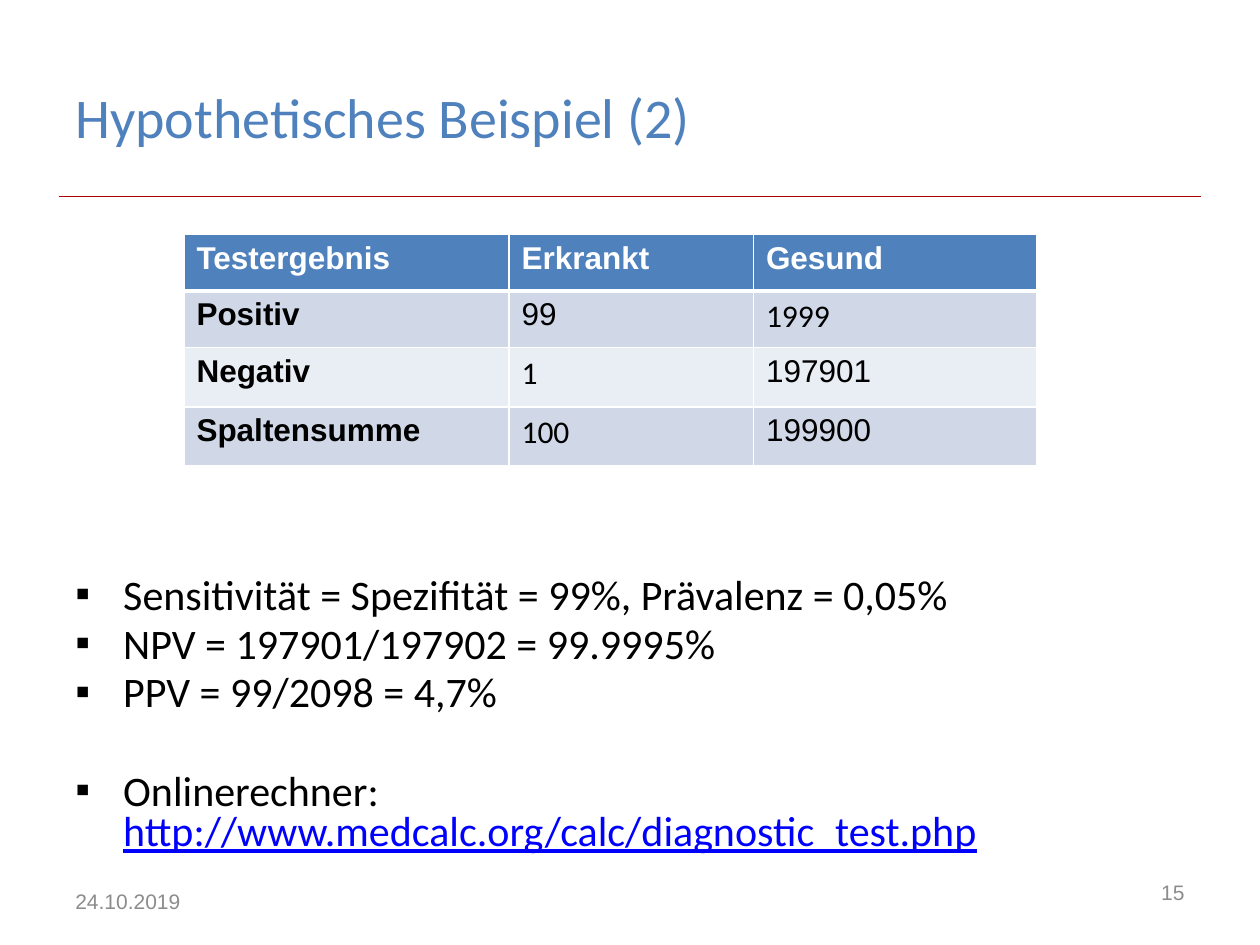
import pptx
import pptx.dml.color
import pptx.enum.shapes
import pptx.enum.text
import pptx.oxml.ns
import pptx.util
from lxml import etree

Inches = pptx.util.Inches
Pt = pptx.util.Pt
RGBColor = pptx.dml.color.RGBColor
Anchor = pptx.enum.text.MSO_ANCHOR
Align = pptx.enum.text.PP_ALIGN
qn = pptx.oxml.ns.qn

BLUE = RGBColor(0x4F, 0x81, 0xBD)
BAND_DARK = RGBColor(0xD0, 0xD8, 0xE8)
BAND_LIGHT = RGBColor(0xE9, 0xED, 0xF4)
WHITE = RGBColor(0xFF, 0xFF, 0xFF)
BLACK = RGBColor(0, 0, 0)
GREY = RGBColor(0x8C, 0x8C, 0x8C)
RED = RGBColor(0xAC, 0, 0)
LINK_BLUE = RGBColor(0, 0, 0xFF)

TABLE_ROWS = [
    ("Testergebnis", "Erkrankt", "Gesund"),
    ("Positiv", "99", "1999"),
    ("Negativ", "1", "197901"),
    ("Spaltensumme", "100", "199900"),
]
CALIBRI_VALUES = {"1999", "1", "100"}
COLUMN_WIDTHS = (2.58, 1.94, 2.25)
ROW_HEIGHTS = (0.45, 0.45, 0.47, 0.47)

# Each bullet: its runs as (text, is link), and the space before in points
BULLETS = [
    ([("Sensitivität = Spezifität = 99%, Prävalenz = 0,05%", False)], 0),
    ([("NPV = 197901/197902 = 99.9995%", False)], 4.8),
    ([("PPV = 99/2098 = 4,7%", False)], 4.8),
    ([("Onlinerechner: ", False),
      ("http://www.medcalc.org/calc/diagnostic_test.php", True)], 33),
]


def add_run(paragraph, text, color, **font_format):
    run = paragraph.add_run()
    run.text = text
    run.font.color.rgb = color
    for name, value in font_format.items():
        setattr(run.font, name, value)


def add_text_frame(slide, left, top, width, height, anchor=Anchor.MIDDLE):
    box = slide.shapes.add_textbox(
        Inches(left), Inches(top), Inches(width), Inches(height))
    frame = box.text_frame
    frame.word_wrap = True
    frame.vertical_anchor = anchor
    return frame


def add_label(slide, place, text, color, align=Align.LEFT, **font_format):
    paragraph = add_text_frame(slide, *place).paragraphs[0]
    paragraph.alignment = align
    add_run(paragraph, text, color, **font_format)


def add_rule(slide, left, right, y):
    rule = slide.shapes.add_connector(
        pptx.enum.shapes.MSO_CONNECTOR.STRAIGHT,
        Inches(left), Inches(y), Inches(right), Inches(y))
    rule.line.color.rgb = RED
    rule.line.width = Pt(0.25)
    etree.SubElement(rule._element.spPr, qn("a:effectLst"))


def set_bullet(paragraph):
    properties = paragraph._p.get_or_add_pPr()
    properties.set("marL", str(Inches(0.38)))
    properties.set("indent", str(-Inches(0.38)))
    etree.SubElement(properties, qn("a:buFont"), typeface="Arial")
    etree.SubElement(properties, qn("a:buChar"), char="▪")


def add_bullets(slide):
    frame = add_text_frame(slide, 0.5, 4.54, 9, 2.42, Anchor.TOP)
    for index, (runs, space_before) in enumerate(BULLETS):
        paragraph = frame.add_paragraph() if index else frame.paragraphs[0]
        set_bullet(paragraph)
        paragraph.line_spacing = 0.8
        paragraph.space_before = Pt(space_before)
        for text, is_link in runs:
            add_run(paragraph, text, LINK_BLUE if is_link else BLACK,
                    name="Calibri", size=Pt(24), underline=is_link)


def set_cell_borders(cell, widths):
    properties = cell._tc.get_or_add_tcPr()
    for side, width in widths.items():
        line = etree.SubElement(properties, qn("a:ln" + side), w=str(Pt(width)))
        fill = etree.SubElement(line, qn("a:solidFill"))
        etree.SubElement(fill, qn("a:srgbClr"), val=str(WHITE))


def add_result_table(slide):
    table = slide.shapes.add_table(
        len(TABLE_ROWS), len(COLUMN_WIDTHS), Inches(1.46), Inches(1.86),
        Inches(sum(COLUMN_WIDTHS)), Inches(sum(ROW_HEIGHTS))).table
    for column, width in zip(table.columns, COLUMN_WIDTHS):
        column.width = Inches(width)
    for row, height in zip(table.rows, ROW_HEIGHTS):
        row.height = Inches(height)

    for row_index, texts in enumerate(TABLE_ROWS):
        is_header = row_index == 0
        band = BAND_DARK if row_index % 2 else BAND_LIGHT
        for column_index, text in enumerate(texts):
            cell = table.cell(row_index, column_index)
            set_cell_borders(cell, {"L": 1, "R": 1,
                                    "T": 3 if row_index == 1 else 1,
                                    "B": 3 if is_header else 1})
            cell.fill.solid()
            cell.fill.fore_color.rgb = BLUE if is_header else band
            add_run(cell.text_frame.paragraphs[0], text,
                    WHITE if is_header else BLACK,
                    name="Calibri" if text in CALIBRI_VALUES else "Arial",
                    size=Pt(18), bold=is_header or column_index == 0)


def main():
    presentation = pptx.Presentation()
    presentation.slide_width = Inches(10)
    presentation.slide_height = Inches(7.5)
    slide = presentation.slides.add_slide(presentation.slide_layouts[6])

    # Title and rule
    add_rule(slide, 0.47, 9.53, 1.56)
    add_label(slide, (0.5, 0.3, 6.77, 1.25), "Hypothetisches Beispiel (2)",
              BLUE, name="Calibri", size=Pt(32))

    # Content
    add_bullets(slide)
    add_result_table(slide)

    # Footer
    footer_format = {"name": "Arial", "size": Pt(12)}
    add_label(slide, (0.5, 6.95, 2.33, 0.4), "24.10.2019", GREY,
              **footer_format)
    add_label(slide, (7.17, 6.83, 2.33, 0.5), "15", GREY, Align.RIGHT,
              **footer_format)

    presentation.save("out.pptx")


if __name__ == "__main__":
    main()
